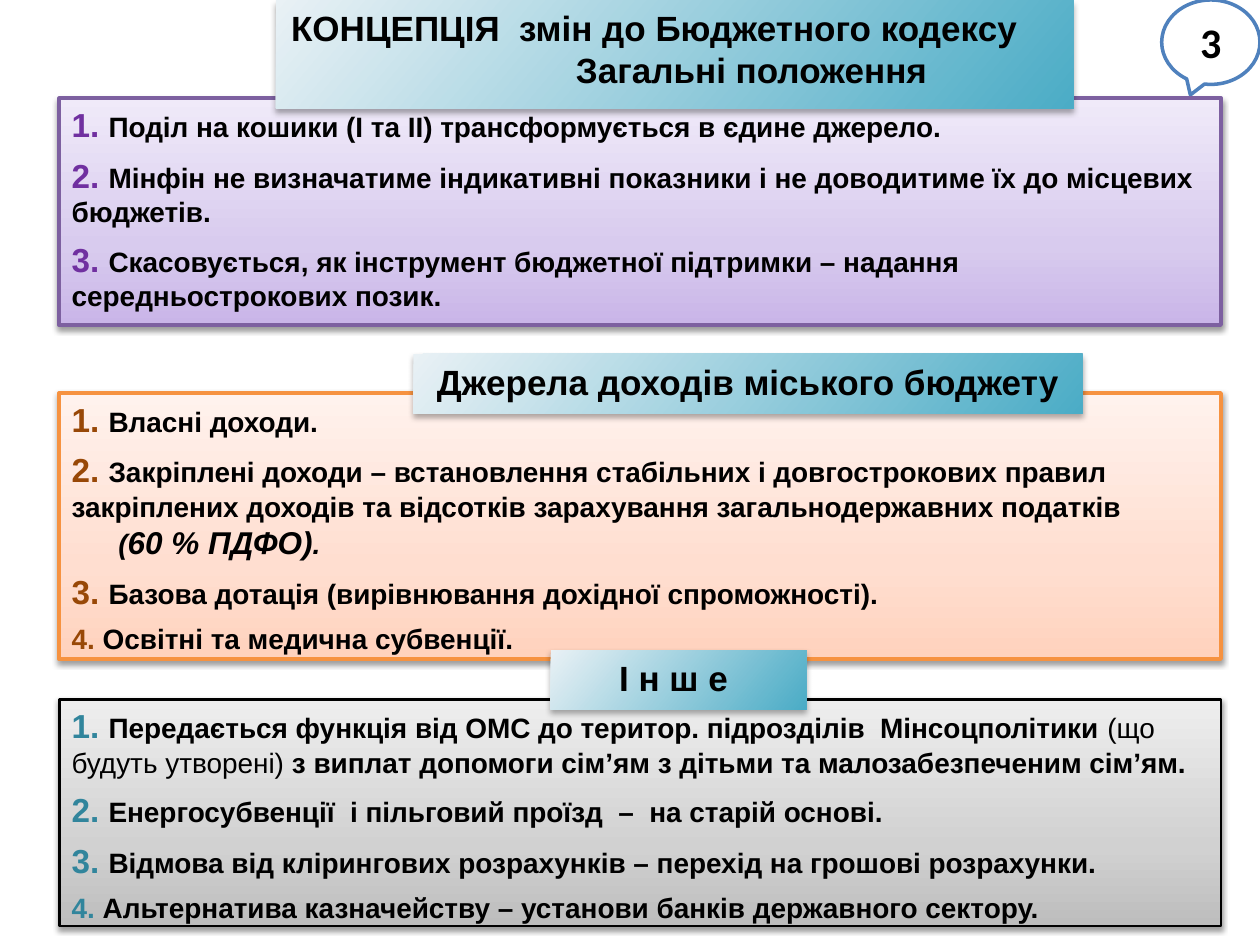
from lxml import etree
from pptx import Presentation
from pptx.dml.color import RGBColor
from pptx.enum.shapes import MSO_SHAPE
from pptx.enum.text import MSO_ANCHOR, MSO_AUTO_SIZE, PP_ALIGN
from pptx.oxml.ns import qn
from pptx.util import Inches, Pt

RECTANGLE = MSO_SHAPE.RECTANGLE
CALLOUT = MSO_SHAPE.OVAL_CALLOUT
TOP, MIDDLE = MSO_ANCHOR.TOP, MSO_ANCHOR.MIDDLE
LEFT, CENTER = PP_ALIGN.LEFT, PP_ALIGN.CENTER
NO_AUTOFIT = MSO_AUTO_SIZE.NONE

THEME = {
    "font": "Arial", "badge_font": "Calibri",
    "text": "000000", "white": "FFFFFF", "badge_line": "4F81BD",
    "body": 16, "number": 19, "accent": 18, "heading": 20, "badge": 24,
    "heading_stops": [(0, "E9F1F5"), (100, "4BACC6")],
    "heading_shadow": {"opacity": 32, "blur": 3.5, "distance": 2.2},
    "panel_shadow": {"opacity": 38, "blur": 3.1, "distance": 1.6},
}

# Content: a run is (text, format); a paragraph is (runs, format)
BOLD, LIGHT = {}, {"bold": False}
ITALIC = {"italic": True}
ACCENT = {"italic": True, "size": THEME["accent"]}


def item(number, *runs, size=THEME["number"], color, after=6):
    """Numbered paragraph with a coloured number."""
    return [(f"{number}. ", {"size": size, "color": color}), *runs], {"after": after}


PURPLE, BROWN, TEAL = "7030A0", "984807", "31859C"
PANELS = [
    {"top": 0.78, "height": 1.8, "line": ("7D60A0", 2.25),
     "stops": [(0, "C9B5E8"), (35, "D8CBEE"), (100, "F0EAF9")],
     "text": [
         item(1, ("Поділ на кошики (І та ІІ) трансформується в єдине джерело.", BOLD), color=PURPLE),
         item(2, ("Мінфін не визначатиме індикативні показники і не доводитиме їх "
                  "до місцевих бюджетів.", BOLD), color=PURPLE),
         item(3, ("Скасовується, як інструмент бюджетної підтримки – надання "
                  "середньострокових позик.", BOLD), color=PURPLE)]},
    {"top": 3.12, "height": 2.11, "line": ("F69240", 2.25),
     "stops": [(0, "FFD2BD"), (35, "FFDED0"), (100, "FFF2ED")],
     "text": [
         item(1, ("Власні доходи.", BOLD), color=BROWN),
         item(2, ("Закріплені доходи – встановлення стабільних і довгострокових правил "
                  "закріплених доходів та відсотків зарахування загальнодержавних податків",
                  BOLD), color=BROWN, after=0),
         ([("(", ITALIC), ("60 % ПДФО)", ACCENT), (".", ITALIC)], {"indent": 0.37}),
         item(3, ("Базова дотація (вирівнювання дохідної спроможності).", BOLD), color=BROWN),
         item(4, ("Освітні та медична субвенції.", BOLD), size=THEME["body"], color=BROWN)]},
    {"top": 5.55, "height": 1.8, "line": ("000000", 1.5),
     "stops": [(0, "BDBDBD"), (35, "D1D1D1"), (100, "EEEEEE")],
     "text": [
         item(1, ("Передається функція від ОМС до територ. підрозділів  Мінсоцполітики ", BOLD),
              ("(що будуть утворені) ", LIGHT),
              ("з виплат допомоги сім’ям з дітьми та малозабезпеченим сім’ям.", BOLD), color=TEAL),
         item(2, ("Енергосубвенції  і пільговий проїзд  –  на старій основі.", BOLD), color=TEAL),
         item(3, ("Відмова від клірингових розрахунків – перехід на грошові розрахунки.", BOLD),
              color=TEAL),
         item(4, ("Альтернатива казначейству – установи банків державного сектору.", BOLD),
              size=THEME["body"], color=TEAL)]},
]
PANEL_LEFT, PANEL_WIDTH = 0.47, 9.22

HEADING = {"size": THEME["heading"]}
SECTION_HEADINGS = [
    ("І н ш е ", (4.37, 5.16, 2.03, 0.47)),
    ("Джерела доходів міського бюджету", (3.28, 2.81, 5.31, 0.47)),
]
TITLE_BOX = (2.19, 0, 6.33, 0.86)
TITLE = [
    ([("КОНЦЕПЦІЯ  змін до Бюджетного кодексу", HEADING)], {"indent": 0.02, "after": 0}),
    ([("Загальні положення", HEADING)], {"indent": 2.28, "after": 0}),
]
BADGE_BOX = (9.22, 0, 0.78, 0.67)
BADGE = [([("3", {"size": THEME["badge"], "font": THEME["badge_font"]})],
          {"align": CENTER, "after": 0})]


def place(shape, box):
    shape.left, shape.top, shape.width, shape.height = map(Inches, box)


def add_box(slide, kind, box):
    shape = slide.shapes.add_shape(kind, *map(Inches, box))
    shape.shadow.inherit = False
    return shape


def set_line(shape, color, width):
    shape.line.color.rgb = RGBColor.from_string(color)
    shape.line.width = Pt(width)


def add_color(parent, color):
    return etree.SubElement(parent, qn("a:srgbClr"), val=color)


def set_gradient(shape, stops, angle):
    shape.fill.gradient()
    shape.fill.gradient_angle = angle
    stop_list = shape._element.spPr.find(qn("a:gradFill")).find(qn("a:gsLst"))
    for stop in list(stop_list):
        stop_list.remove(stop)
    for position, color in stops:
        add_color(etree.SubElement(stop_list, qn("a:gs"), pos=str(position * 1000)), color)


def set_shadow(shape, opacity, blur, distance):
    shape.shadow.inherit = False
    effects = shape._element.spPr.find(qn("a:effectLst"))
    shadow = etree.SubElement(effects, qn("a:outerShdw"), blurRad=str(Pt(blur)),
                              dist=str(Pt(distance)), dir="5400000", rotWithShape="0")
    etree.SubElement(add_color(shadow, THEME["text"]), qn("a:alpha"), val=str(opacity * 1000))


def add_run(paragraph, text, size=THEME["body"], color=THEME["text"], bold=True,
            italic=False, font=THEME["font"]):
    run = paragraph.add_run()
    run.text = text
    run.font.name, run.font.size = font, Pt(size)
    run.font.bold, run.font.italic = bold, italic
    run.font.color.rgb = RGBColor.from_string(color)


def write(shape, paragraphs, anchor=TOP):
    frame = shape.text_frame
    frame.word_wrap = True
    frame.auto_size = NO_AUTOFIT
    frame.vertical_anchor = anchor
    for index, (runs, layout) in enumerate(paragraphs):
        paragraph = frame.add_paragraph() if index else frame.paragraphs[0]
        paragraph.alignment = layout.get("align", LEFT)
        paragraph.space_after = Pt(layout.get("after", 6))
        if "indent" in layout:
            paragraph._p.get_or_add_pPr().set("marL", str(Inches(layout["indent"])))
        for text, style in runs:
            add_run(paragraph, text, **style)


def style_heading(shape, paragraphs):
    set_gradient(shape, THEME["heading_stops"], 320)
    shape.line.fill.background()
    set_shadow(shape, **THEME["heading_shadow"])
    write(shape, paragraphs)


def main():
    presentation = Presentation()
    presentation.slide_width, presentation.slide_height = Inches(10), Inches(7.5)
    slide = presentation.slides.add_slide(presentation.slide_layouts[5])

    # Slide number callout
    badge = add_box(slide, CALLOUT, BADGE_BOX)
    badge.fill.solid()
    badge.fill.fore_color.rgb = RGBColor.from_string(THEME["white"])
    set_line(badge, THEME["badge_line"], 2)
    write(badge, BADGE, anchor=MIDDLE)

    # Text panels
    for panel in PANELS:
        shape = add_box(slide, RECTANGLE,
                        (PANEL_LEFT, panel["top"], PANEL_WIDTH, panel["height"]))
        set_gradient(shape, panel["stops"], 90)
        set_line(shape, *panel["line"])
        set_shadow(shape, **THEME["panel_shadow"])
        write(shape, panel["text"])

    # Section headings over the panel edges
    for text, box in SECTION_HEADINGS:
        style_heading(add_box(slide, RECTANGLE, box),
                      [([(text, HEADING)], {"align": CENTER, "after": 10})])

    # Title, brought in front of the first panel
    title = slide.shapes.title
    place(title, TITLE_BOX)
    style_heading(title, TITLE)
    slide.shapes._spTree.append(title._element)

    presentation.save("out.pptx")


if __name__ == "__main__":
    main()
